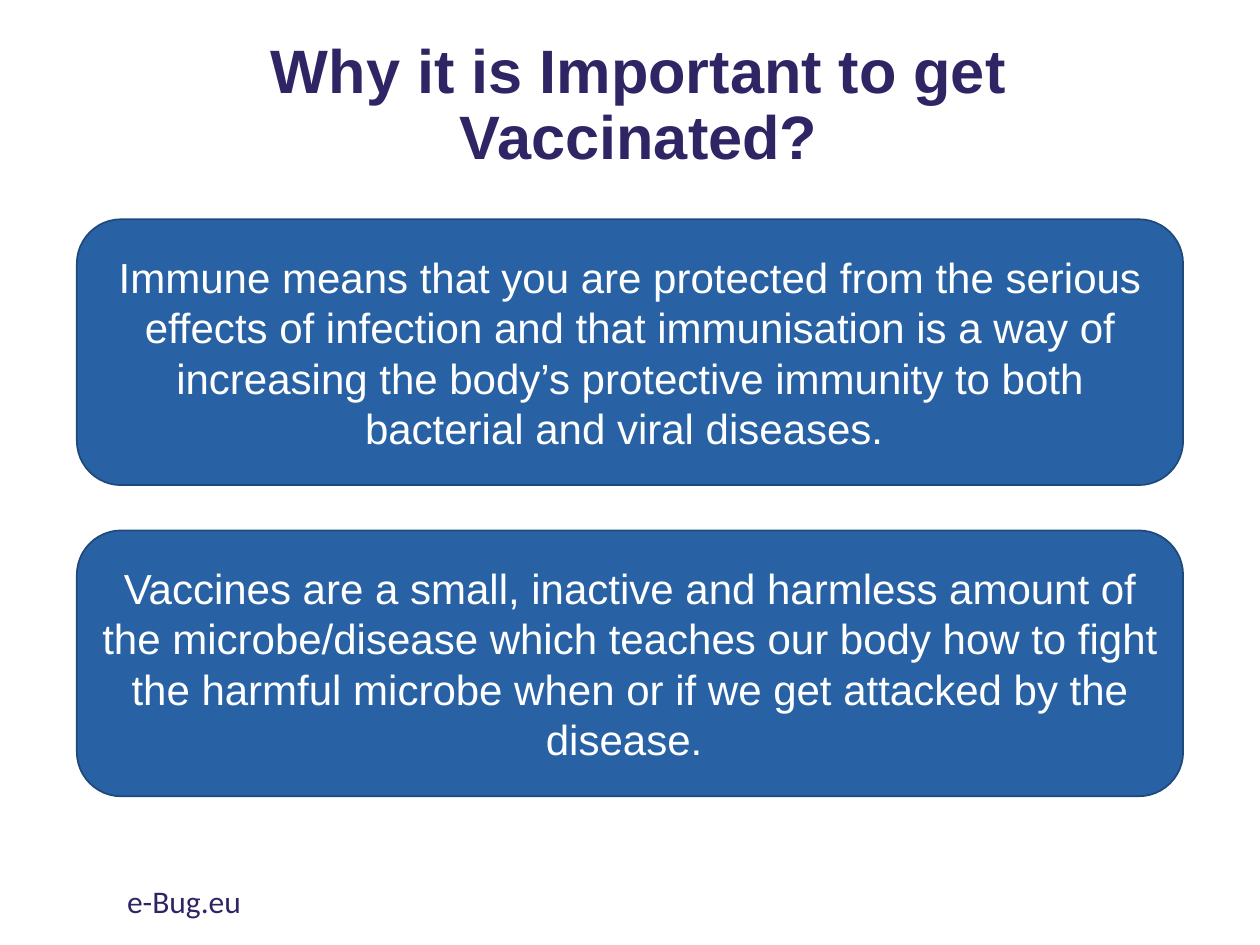
import pptx
import pptx.dml.color
import pptx.enum.shapes
import pptx.enum.text
import pptx.util
from pptx.util import Inches

TITLE = "Why it is Important to get Vaccinated?"
FACTS = [
    "Immune means that you are protected from the serious effects of infection and that "
    "immunisation is a way of increasing the body’s protective immunity to both bacterial "
    "and viral diseases. ",
    "Vaccines are a small, inactive and harmless amount of the microbe/disease which teaches "
    "our body how to fight the harmful microbe when or if we get attacked by the disease. ",
]
WEBSITE = "e-Bug.eu"

THEME = {
    "ink": "302564",
    "panel": "2862A5",
    "edge": "1E497A",
    "light": "FFFFFF",
    "title_size": 35,
    "fact_size": 24,
    "website_size": 18,
    "body_font": "Arial",
    "website_font": "Calibri",
}

SLIDE_WIDTH = 10
PANEL_WIDTH, PANEL_HEIGHT = 8.78, 2.11
PANEL_LEFT = (SLIDE_WIDTH - PANEL_WIDTH) / 2
PANEL_TOP, PANEL_GAP = 1.74, 0.36


def color(key):
    return pptx.dml.color.RGBColor.from_string(THEME[key])


def write(part, text, font, size, ink, bold=False, centered=True):
    frame = part.text_frame
    frame.word_wrap = True
    anchors = pptx.enum.text.MSO_ANCHOR
    frame.vertical_anchor = anchors.MIDDLE if centered else anchors.TOP
    paragraph = frame.paragraphs[0]
    paragraph.text = text
    alignments = pptx.enum.text.PP_ALIGN
    paragraph.alignment = alignments.CENTER if centered else alignments.LEFT
    paragraph.font.name = THEME[font]
    paragraph.font.size = pptx.util.Pt(THEME[size])
    paragraph.font.bold = bold
    paragraph.font.color.rgb = color(ink)
    return paragraph


def main():
    deck = pptx.Presentation()
    deck.slide_width, deck.slide_height = Inches(SLIDE_WIDTH), Inches(7.5)
    slide = deck.slides.add_slide(deck.slide_layouts[6])

    title = slide.shapes.add_textbox(Inches(0.76), Inches(0.39), Inches(8.62), Inches(0.91))
    heading = write(title, TITLE, "body_font", "title_size", "ink", bold=True)
    heading.line_spacing = 0.9

    for index, fact in enumerate(FACTS):
        top = PANEL_TOP + index * (PANEL_HEIGHT + PANEL_GAP)
        panel = slide.shapes.add_shape(
            pptx.enum.shapes.MSO_SHAPE.ROUNDED_RECTANGLE,
            Inches(PANEL_LEFT), Inches(top), Inches(PANEL_WIDTH), Inches(PANEL_HEIGHT),
        )
        panel.shadow.inherit = False
        panel.fill.solid()
        panel.fill.fore_color.rgb = color("panel")
        panel.line.color.rgb = color("edge")
        panel.line.width = pptx.util.Pt(1)
        write(panel, fact, "body_font", "fact_size", "light")

    website = slide.shapes.add_textbox(Inches(0.91), Inches(6.95), Inches(3.38), Inches(0.4))
    write(website, WEBSITE, "website_font", "website_size", "ink", centered=False)

    deck.save("out.pptx")


if __name__ == "__main__":
    main()
